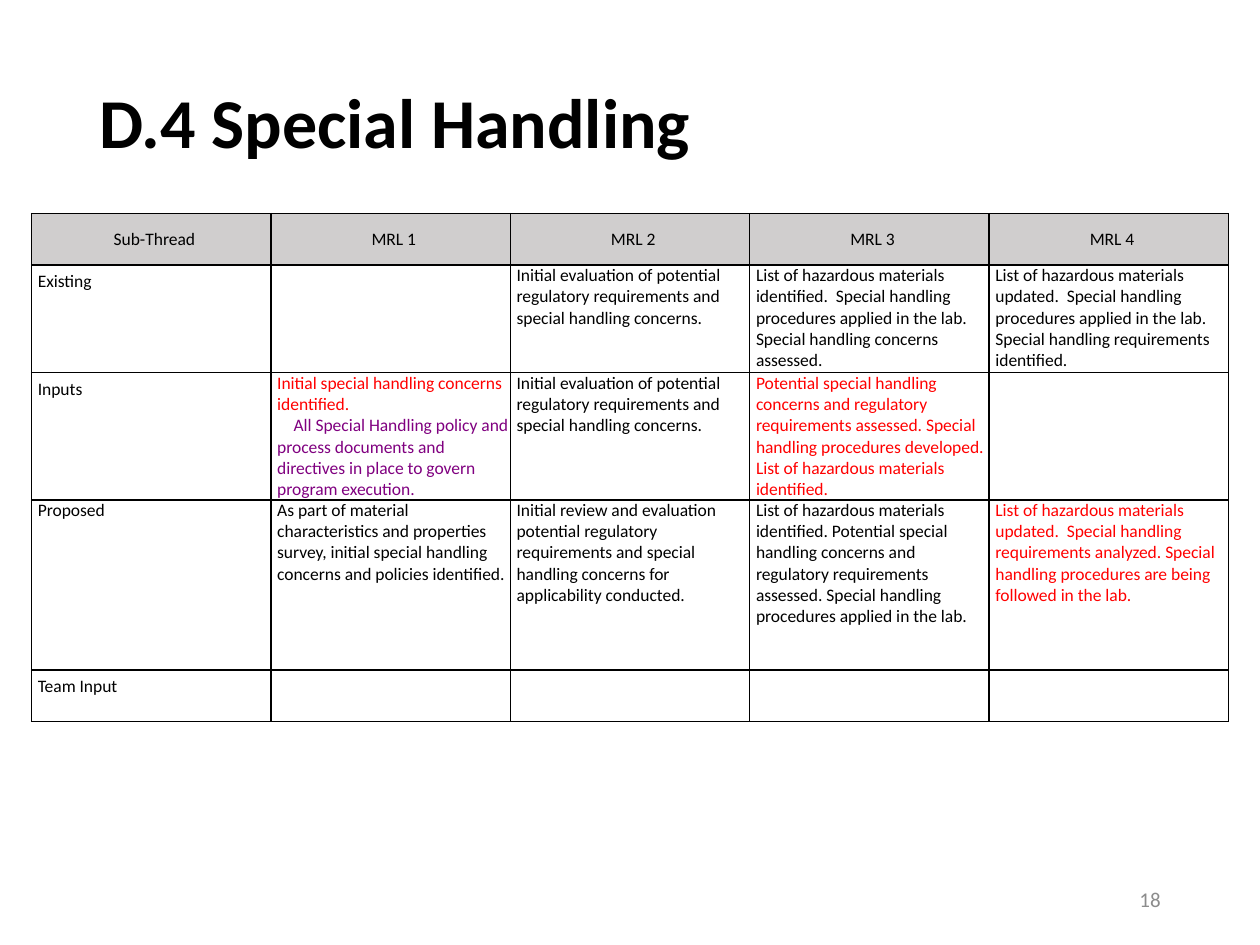
import pptx
import pptx.util
import pptx.dml.color
import pptx.enum.text
import pptx.oxml
import pptx.oxml.ns
from dataclasses import dataclass

ANCHOR = pptx.enum.text.MSO_ANCHOR
ALIGN = pptx.enum.text.PP_ALIGN


@dataclass(frozen=True)
class Theme:
    font: str = "Calibri"
    ink: str = "000000"
    red: str = "FF0000"
    plum: str = "800080"
    gray: str = "8C8C8C"
    head: str = "D0CECE"
    title: int = 40
    body: int = 10
    page: int = 12
    line: int = 1


class Deck:
    """Draws styled elements on one slide, with lengths in percent of its size."""

    def __init__(self, theme):
        self.theme = theme
        self.prs = pptx.Presentation()
        self.prs.slide_width = pptx.util.Inches(10)
        self.prs.slide_height = pptx.util.Inches(7.5)
        self.slide = self.prs.slides.add_slide(self.prs.slide_layouts[6])

    def wide(self, share):
        return round(self.prs.slide_width * share / 100)

    def high(self, share):
        return round(self.prs.slide_height * share / 100)

    def style(self, para, size, color, bold=False):
        for run in para.runs:
            run.font.name = self.theme.font
            run.font.size = pptx.util.Pt(size)
            run.font.bold = bold
            run.font.color.rgb = pptx.dml.color.RGBColor.from_string(color)

    def text(self, words, x, y, w, h, size, color, align=ALIGN.LEFT, bold=False):
        box = self.slide.shapes.add_textbox(
            self.wide(x), self.high(y), self.wide(w), self.high(h))
        frame = box.text_frame
        frame.word_wrap = True
        frame.vertical_anchor = ANCHOR.MIDDLE
        frame.text = words
        para = frame.paragraphs[0]
        para.alignment = align
        para.line_spacing = 0.9
        self.style(para, size, color, bold)

    def border(self, cell):
        props = cell._tc.get_or_add_tcPr()
        space = pptx.oxml.ns.nsdecls("a")
        for place, side in enumerate(("lnL", "lnR", "lnT", "lnB")):
            props.insert(place, pptx.oxml.parse_xml(
                f'<a:{side} {space} w="{pptx.util.Pt(self.theme.line)}"><a:solidFill>'
                f'<a:srgbClr val="{self.theme.ink}"/></a:solidFill></a:{side}>'))

    def cell(self, cell, parts, head, pad):
        if head:
            cell.fill.solid()
            cell.fill.fore_color.rgb = pptx.dml.color.RGBColor.from_string(self.theme.head)
            cell.vertical_anchor = ANCHOR.MIDDLE
        else:
            cell.fill.background()
        self.border(cell)
        cell.margin_left = pptx.util.Inches(0.05)
        cell.margin_right = 0
        cell.margin_top = cell.margin_bottom = pptx.util.Inches(pad)
        frame = cell.text_frame
        frame.text = "\n".join(words for words, _ in parts)
        for place, (para, (_, color)) in enumerate(zip(frame.paragraphs, parts)):
            para.alignment = ALIGN.CENTER if head else ALIGN.LEFT
            if place:
                para._p.get_or_add_pPr().set("indent", str(pptx.util.Inches(0.13)))
            self.style(para, self.theme.body, color)

    def table(self, rows, highs, pads, x, y, w):
        count = len(rows[0])
        grid = self.slide.shapes.add_table(
            len(rows), count, self.wide(x), self.high(y),
            self.wide(w), self.high(sum(highs))).table
        for col in grid.columns:
            col.width = self.wide(w / count)
        for r, (row, high, pad) in enumerate(zip(rows, highs, pads)):
            grid.rows[r].height = self.high(high)
            for c, item in enumerate(row):
                parts = [(item, self.theme.ink)] if isinstance(item, str) else item
                gap = 0.05 if c == 0 and pad else 0
                self.cell(grid.cell(r, c), parts, r == 0, gap)

    def save(self):
        self.prs.save("out.pptx")


def main():
    look = Theme()
    deck = Deck(look)
    first = ("Initial evaluation of potential regulatory requirements "
             "and special handling concerns.")
    rows = [
        ["Sub-Thread"] + [f"MRL {n}" for n in range(1, 5)],
        ["Existing", "", first,
         "List of hazardous materials identified.  Special handling procedures "
         "applied in the lab. Special handling concerns assessed.",
         "List of hazardous materials updated.  Special handling procedures "
         "applied in the lab. Special handling requirements identified."],
        ["Inputs",
         [("Initial special handling concerns identified.", look.red),
          ("All Special Handling policy and process documents and directives "
           "in place to govern program execution.", look.plum)],
         first,
         [("Potential special handling concerns and regulatory requirements "
           "assessed. Special handling procedures developed. "
           "List of hazardous materials identified.", look.red)],
         ""],
        ["Proposed",
         "As part of material characteristics and properties survey, initial "
         "special handling concerns and policies identified.",
         "Initial review and evaluation potential regulatory requirements and "
         "special handling concerns for applicability conducted.",
         "List of hazardous materials identified. Potential special handling "
         "concerns and regulatory requirements assessed. Special handling "
         "procedures applied in the lab.",
         [("List of hazardous materials updated.  Special handling requirements "
           "analyzed. Special handling procedures are being followed in the lab.",
           look.red)]],
        ["Team Input", "", "", "", ""],
    ]
    deck.text("D.4 Special Handling", 6.9, 5.33, 86.2, 16, look.title, look.ink, bold=True)
    deck.table(rows, [5.45, 11.4, 13.45, 18, 5.45],
               [False, True, True, False, True], 2.5, 22.6, 95)
    deck.text("18", 70.6, 92.67, 22.5, 5.33, look.page, look.gray, ALIGN.RIGHT)
    deck.save()


if __name__ == "__main__":
    main()
